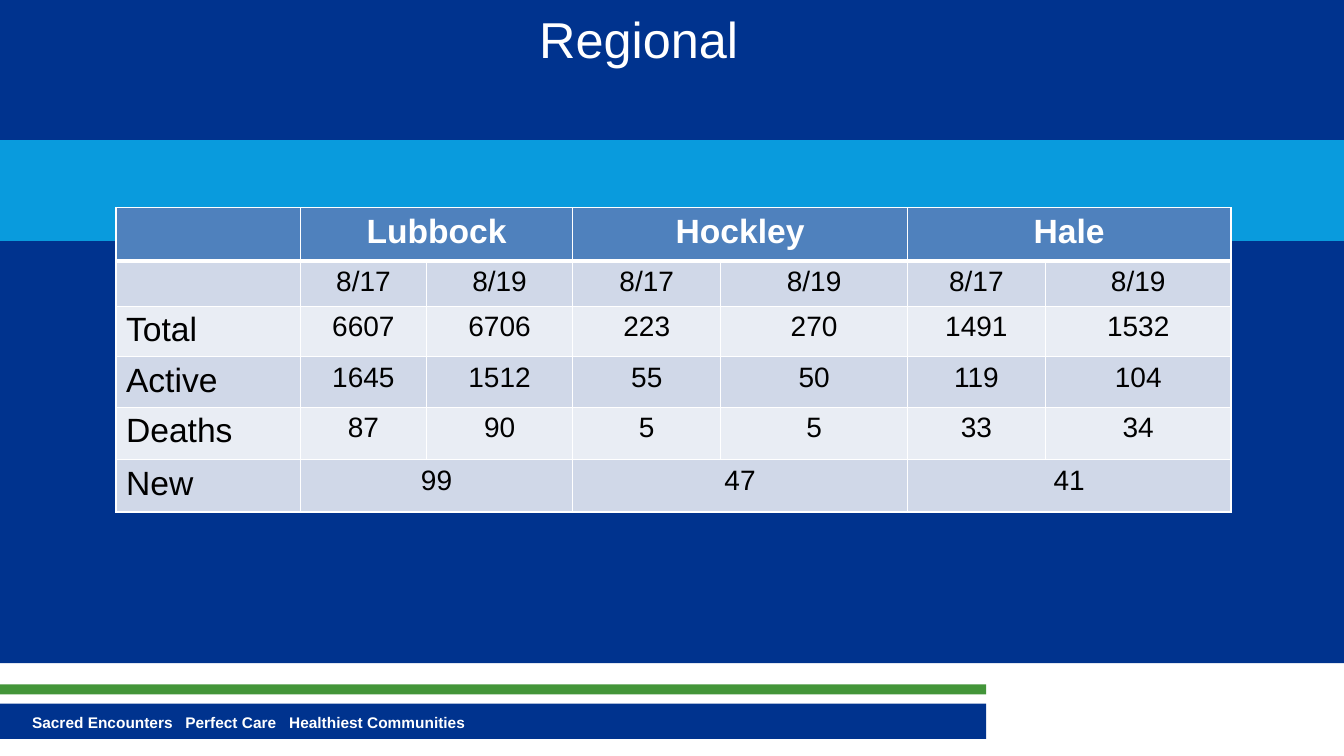
import pptx
import pptx.util
import pptx.oxml
import pptx.oxml.ns
import pptx.dml.color
import pptx.enum.shapes
import pptx.enum.text

Inches = pptx.util.Inches
CENTER = pptx.enum.text.PP_ALIGN.CENTER
LEFT = pptx.enum.text.PP_ALIGN.LEFT
COLORS = {
    "navy": "00338E", "sky": "099BDD", "green": "439539", "white": "FFFFFF",
    "black": "000000", "header": "4F81BD", "odd": "D0D8E8", "even": "E9EDF4",
}
NAMESPACE = pptx.oxml.ns.nsdecls("a")


def write(para, text, align, size, color, bold=False):
    para.alignment = align
    span = para.add_run()
    span.text = text
    look = {"name": "Arial", "size": pptx.util.Pt(size), "bold": bold}
    for name, value in look.items():
        setattr(span.font, name, value)
    span.font.color.rgb = pptx.dml.color.RGBColor.from_string(COLORS[color])


def border(cell, widths):
    """Draw white cell borders; widths gives points for each of the sides L, R, T, B."""
    properties = cell._tc.get_or_add_tcPr()
    for place, (side, width) in enumerate(widths.items()):
        properties.insert(place, pptx.oxml.parse_xml(
            f'<a:ln{side} {NAMESPACE} w="{pptx.util.Pt(width)}"><a:solidFill>'
            f'<a:srgbClr val="{COLORS["white"]}"/></a:solidFill></a:ln{side}>'))


deck = pptx.Presentation()
deck.slide_width, deck.slide_height = Inches(13.33), Inches(7.5)
page = deck.slides.add_slide(deck.slide_layouts[6])

# Background panels and footer bars
panels = [
    ("navy", 0, 0, 13.33, 6.58),
    ("navy", -0.03, 6.98, 9.81, 0.35),
    ("green", -0.03, 6.79, 9.81, 0.1),
    ("sky", 0, 1.39, 13.33, 1),
]
for color, *place in panels:
    panel = page.shapes.add_shape(
        pptx.enum.shapes.MSO_SHAPE.RECTANGLE, *map(Inches, place))
    panel.shadow.inherit = False
    panel.fill.solid()
    panel.fill.fore_color.rgb = pptx.dml.color.RGBColor.from_string(COLORS[color])
    panel.line.fill.background()

# Title and footer motto
motto = "\t".join(["Sacred Encounters", "Perfect Care", "Healthiest Communities"])
texts = [
    ("Regional", CENTER, 36, False, (0.58, 0.03, 11.51, 1.51)),
    (motto, LEFT, 11, True, (0.22, 7.03, 8.33, 0.29)),
]
for text, align, size, bold, place in texts:
    box = page.shapes.add_textbox(*map(Inches, place))
    box.text_frame.word_wrap = True
    write(box.text_frame.paragraphs[0], text, align, size, "white", bold)

motto_format = box.text_frame.paragraphs[0]._p.get_or_add_pPr()
stops = "".join(f'<a:tab pos="{Inches(stop)}" algn="l"/>' for stop in (1.52, 2.55))
motto_format.append(pptx.oxml.parse_xml(f"<a:tabLst {NAMESPACE}>{stops}</a:tabLst>"))

# County table: None marks a cell merged into the one on its left
column_widths = [1.83, 1.25, 1.45, 1.47, 1.85, 1.37, 1.84]
row_heights = [0.53, 0.45, 0.47, 0.5, 0.52, 0.52]
rows = [
    ["", "Lubbock", None, "Hockley", None, "Hale", None],
    ["", "8/17", "8/19", "8/17", "8/19", "8/17", "8/19"],
    ["Total", "6607", "6706", "223", "270", "1491", "1532"],
    ["Active", "1645", "1512", "55", "50", "119", "104"],
    ["Deaths", "87", "90", "5", "5", "33", "34"],
    ["New", "99", None, "47", None, "41", None],
]
table = page.shapes.add_table(
    len(rows), len(column_widths), Inches(1.15), Inches(2.06),
    Inches(sum(column_widths)), Inches(sum(row_heights))).table
for column, width in zip(table.columns, column_widths):
    column.width = Inches(width)
for row, height in zip(table.rows, row_heights):
    row.height = Inches(height)

for r, values in enumerate(rows):
    header = r == 0
    fill = "header" if header else "odd" if r % 2 else "even"
    for c, value in enumerate(values):
        cell = table.cell(r, c)
        cell.fill.solid()
        cell.fill.fore_color.rgb = pptx.dml.color.RGBColor.from_string(COLORS[fill])
        border(cell, {"L": 1, "R": 1, "T": 3 if r == 1 else 1, "B": 3 if header else 1})
        if value is None:
            table.cell(r, c - 1).merge(cell)
        elif value:
            write(cell.text_frame.paragraphs[0], value, CENTER if c else LEFT,
                  24 if header or c == 0 else 20, "white" if header else "black", header)

deck.save("out.pptx")
